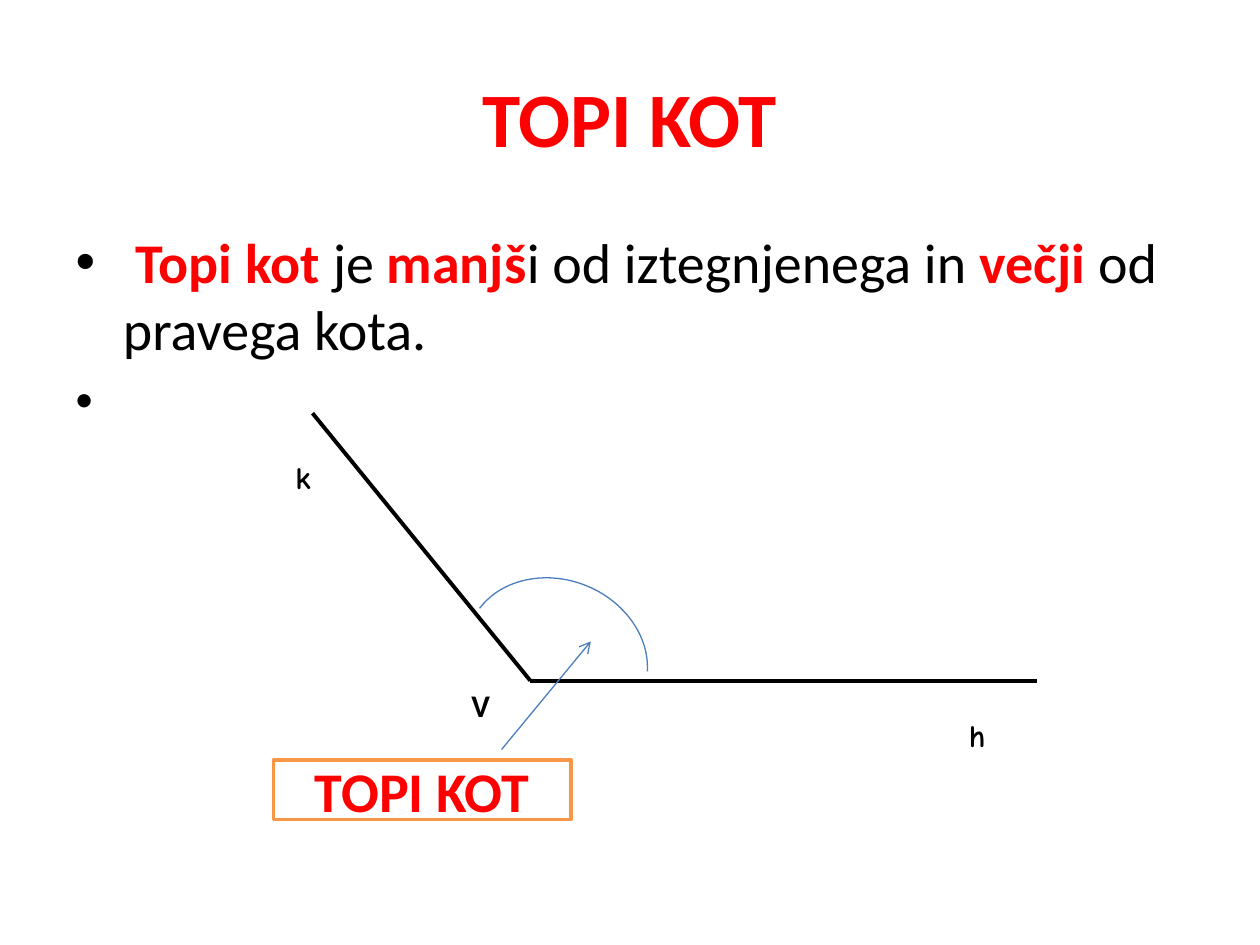
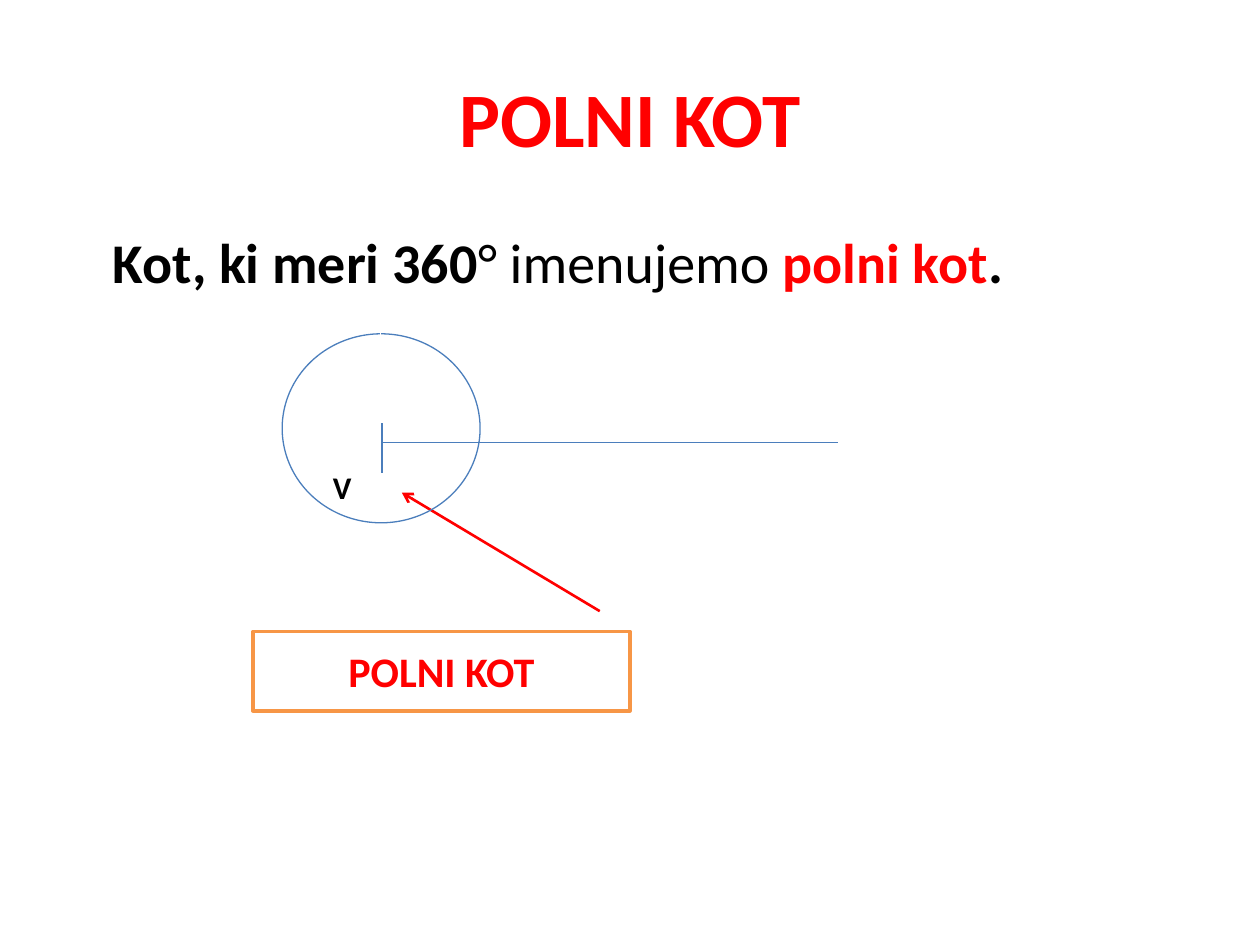
from dataclasses import dataclass

import pptx
import pptx.dml.color
import pptx.enum.shapes
import pptx.enum.text
import pptx.oxml.ns
import pptx.util
from lxml import etree

Cm = pptx.util.Cm
Pt = pptx.util.Pt
SHAPES = pptx.enum.shapes.MSO_SHAPE


@dataclass(frozen=True)
class Theme:
    """Colours, fonts and type sizes shared by both slides."""
    black: str = "000000"
    white: str = "FFFFFF"
    red: str = "FF0000"
    blue: str = "4B7EBC"
    orange: str = "F79646"
    font: str = "Calibri"
    ray_font: str = "Comic Neue"
    title_size: int = 44
    body_size: int = 32
    spacer_size: int = 28
    label_size: int = 18
    thin: float = 0.75
    arrow: float = 1.5
    frame: float = 2
    ray: float = 2.25


def rgb(colour):
    return pptx.dml.color.RGBColor.from_string(colour)


def add_xml(parent, tag, **attributes):
    return etree.SubElement(parent, pptx.oxml.ns.qn(tag), **attributes)


class AngleDeck:
    def __init__(self, theme):
        self.theme = theme
        self.presentation = pptx.Presentation()
        self.presentation.slide_width = Cm(25.4)
        self.presentation.slide_height = Cm(19.05)
        self.slide = None

    def style_font(self, font, size, colour, bold=True, name=None):
        font.name = name or self.theme.font
        font.size = Pt(size)
        font.bold = bold
        font.color.rgb = rgb(colour)

    def place(self, shape, left, top, width, height):
        shape.left, shape.top = Cm(left), Cm(top)
        shape.width, shape.height = Cm(width), Cm(height)

    def new_slide(self, title):
        """Start a slide with a red, centred title."""
        layout = self.presentation.slide_layouts[1]
        self.slide = self.presentation.slides.add_slide(layout)
        shape = self.slide.shapes.title
        self.place(shape, 1.27, 0.76, 22.86, 3.18)
        shape.text_frame.text = title
        paragraph = shape.text_frame.paragraphs[0]
        paragraph.alignment = pptx.enum.text.PP_ALIGN.CENTER
        self.style_font(paragraph.font, self.theme.title_size, self.theme.red)

    def body(self, runs, bulleted=True):
        """Fill the body from (text, colour, bold) runs; return its text frame."""
        shape = self.slide.placeholders[1]
        self.place(shape, 1.27, 4.45, 22.86, 12.57)
        paragraph = shape.text_frame.paragraphs[0]
        for text, colour, bold in runs:
            run = paragraph.add_run()
            run.text = text
            self.style_font(run.font, self.theme.body_size, colour, bold)
        if not bulleted:
            properties = paragraph._p.get_or_add_pPr()
            properties.set("marL", str(Cm(0.75)))
            properties.set("indent", "0")
            add_xml(properties, "a:buNone")
        return shape.text_frame

    def lone_bullet(self, text_frame):
        paragraph = text_frame.add_paragraph()
        paragraph.text = " "
        self.style_font(paragraph.font, self.theme.spacer_size, self.theme.black, False)

    def write_centred(self, shape, text, size, colour, font_name=None):
        frame = shape.text_frame
        frame.word_wrap = True
        frame.vertical_anchor = pptx.enum.text.MSO_ANCHOR.MIDDLE
        frame.text = text
        paragraph = frame.paragraphs[0]
        paragraph.alignment = pptx.enum.text.PP_ALIGN.CENTER
        self.style_font(paragraph.font, size, colour, name=font_name)

    def vertex_label(self, left, top):
        shape = self.slide.shapes.add_textbox(Cm(left), Cm(top), Cm(1.6), Cm(1.4))
        self.write_centred(shape, "V", self.theme.label_size, self.theme.black)

    def white_box(self, left, top, width, height):
        shape = self.slide.shapes.add_shape(
            SHAPES.RECTANGLE, Cm(left), Cm(top), Cm(width), Cm(height))
        shape.shadow.inherit = False
        shape.fill.solid()
        shape.fill.fore_color.rgb = rgb(self.theme.white)
        shape.line.fill.background()
        return shape

    def ray_label(self, text, left, top):
        shape = self.white_box(left, top, 1.2, 1.4)
        self.write_centred(shape, text, self.theme.label_size, self.theme.black,
                           self.theme.ray_font)

    def name_box(self, text, size, left, top, width, height):
        shape = self.white_box(left, top, width, height)
        shape.line.color.rgb = rgb(self.theme.orange)
        shape.line.width = Pt(self.theme.frame)
        self.write_centred(shape, text, size, self.theme.red)

    def line(self, start, end, colour, width, arrow=False):
        connector = self.slide.shapes.add_connector(
            pptx.enum.shapes.MSO_CONNECTOR.STRAIGHT,
            Cm(start[0]), Cm(start[1]), Cm(end[0]), Cm(end[1]))
        connector.line.color.rgb = rgb(colour)
        connector.line.width = Pt(width)
        if arrow:
            add_xml(connector.line._get_or_add_ln(), "a:tailEnd", type="arrow")
        add_xml(connector._element.spPr, "a:effectLst")

    def arc(self, left, top, width, height, start, end, rotation=0):
        shape = self.slide.shapes.add_shape(
            SHAPES.ARC, Cm(left), Cm(top), Cm(width), Cm(height))
        shape.shadow.inherit = False
        shape.fill.background()
        shape.line.color.rgb = rgb(self.theme.blue)
        shape.line.width = Pt(self.theme.thin)
        shape.adjustments[0], shape.adjustments[1] = start, end
        shape.rotation = rotation


def add_obtuse_angle(deck):
    theme = deck.theme
    deck.new_slide("TOPI KOT")
    text_frame = deck.body([
        (" ", theme.black, False),
        ("Topi kot ", theme.red, True),
        ("je ", theme.black, False),
        ("manjš", theme.red, True),
        ("i od iztegnjenega in ", theme.black, False),
        ("večji ", theme.red, True),
        ("od pravega kota.", theme.black, False),
    ])
    deck.lone_bullet(text_frame)

    # Two rays from the vertex, with their labels
    vertex = (10.69, 13.72)
    for ray_end in ((20.9, 13.72), (6.3, 8.33)):
        deck.line(vertex, ray_end, theme.black, theme.ray)
    deck.vertex_label(8.89, 13.51)
    deck.ray_label("h", 19.1, 14.12)
    deck.ray_label("k", 5.51, 8.92)

    # Marked angle and its name
    deck.arc(9.65, 11.4, 3.15, 3.73, 168.71, 46.11, rotation=291.6)
    deck.line((10.11, 15.11), (11.91, 12.93), theme.blue, theme.thin, arrow=True)
    deck.name_box("TOPI KOT", theme.body_size, 5.51, 15.32, 6, 1.2)


def add_full_angle(deck):
    theme = deck.theme
    deck.new_slide("POLNI KOT")
    deck.body([
        ("Kot, ki meri 360", theme.black, True),
        ("° imenujemo ", theme.black, False),
        ("polni kot", theme.red, True),
        (".", theme.black, True),
    ], bulleted=False)

    # Name and pointer
    deck.vertex_label(6.1, 9.12)
    deck.name_box("POLNI KOT", 24, 5.1, 12.73, 7.6, 1.6)
    deck.line((12.09, 12.32), (8.1, 9.93), theme.red, theme.arrow, arrow=True)

    # Ray, vertex tick and full turn
    deck.line((7.7, 8.92), (16.89, 8.92), theme.blue, theme.thin)
    deck.line((7.7, 9.53), (7.7, 8.53), theme.blue, theme.thin)
    deck.arc(5.69, 6.73, 3.99, 3.81, 162, 161.57)


def main():
    deck = AngleDeck(Theme())
    add_obtuse_angle(deck)
    add_full_angle(deck)
    deck.presentation.save("out.pptx")


if __name__ == "__main__":
    main()
